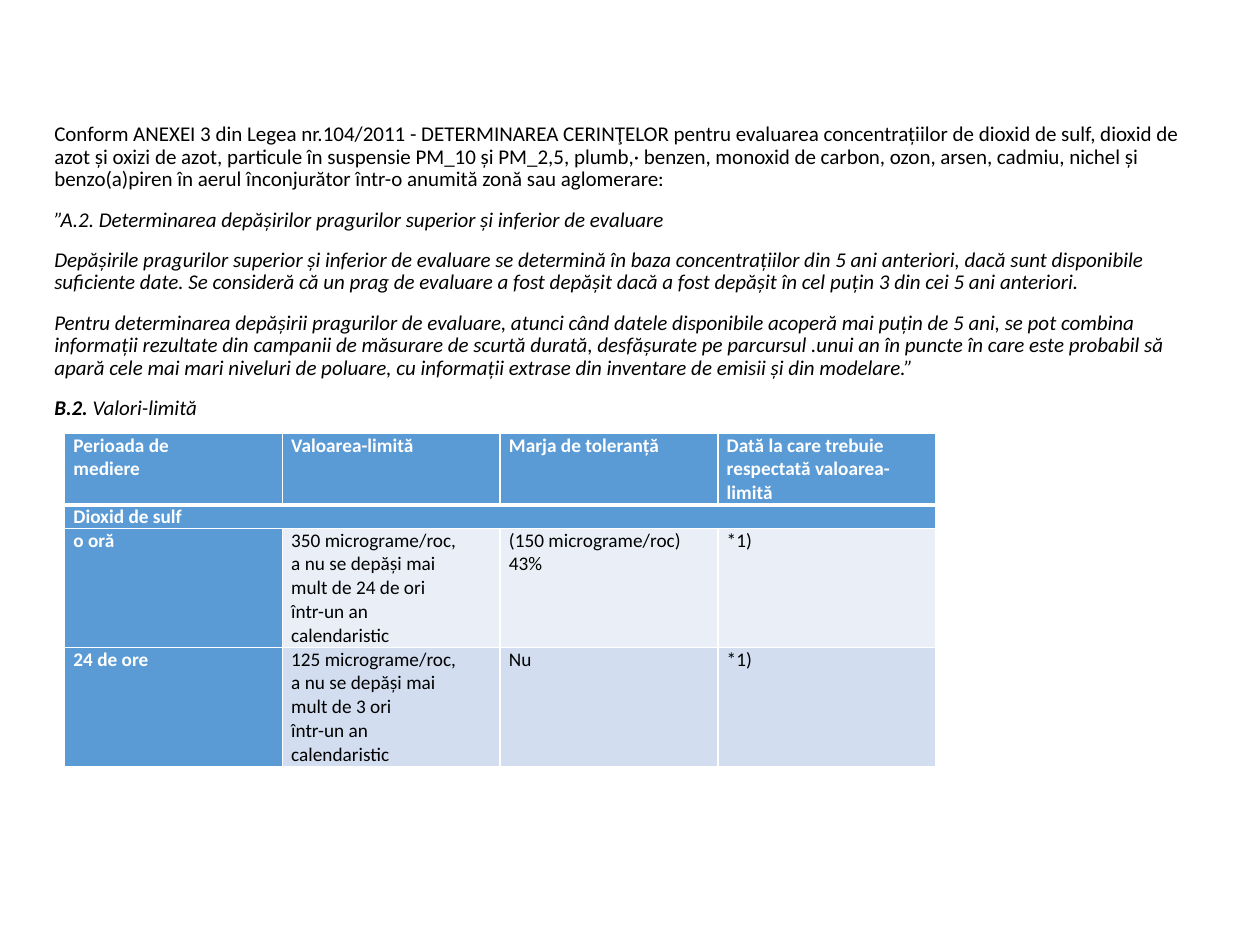
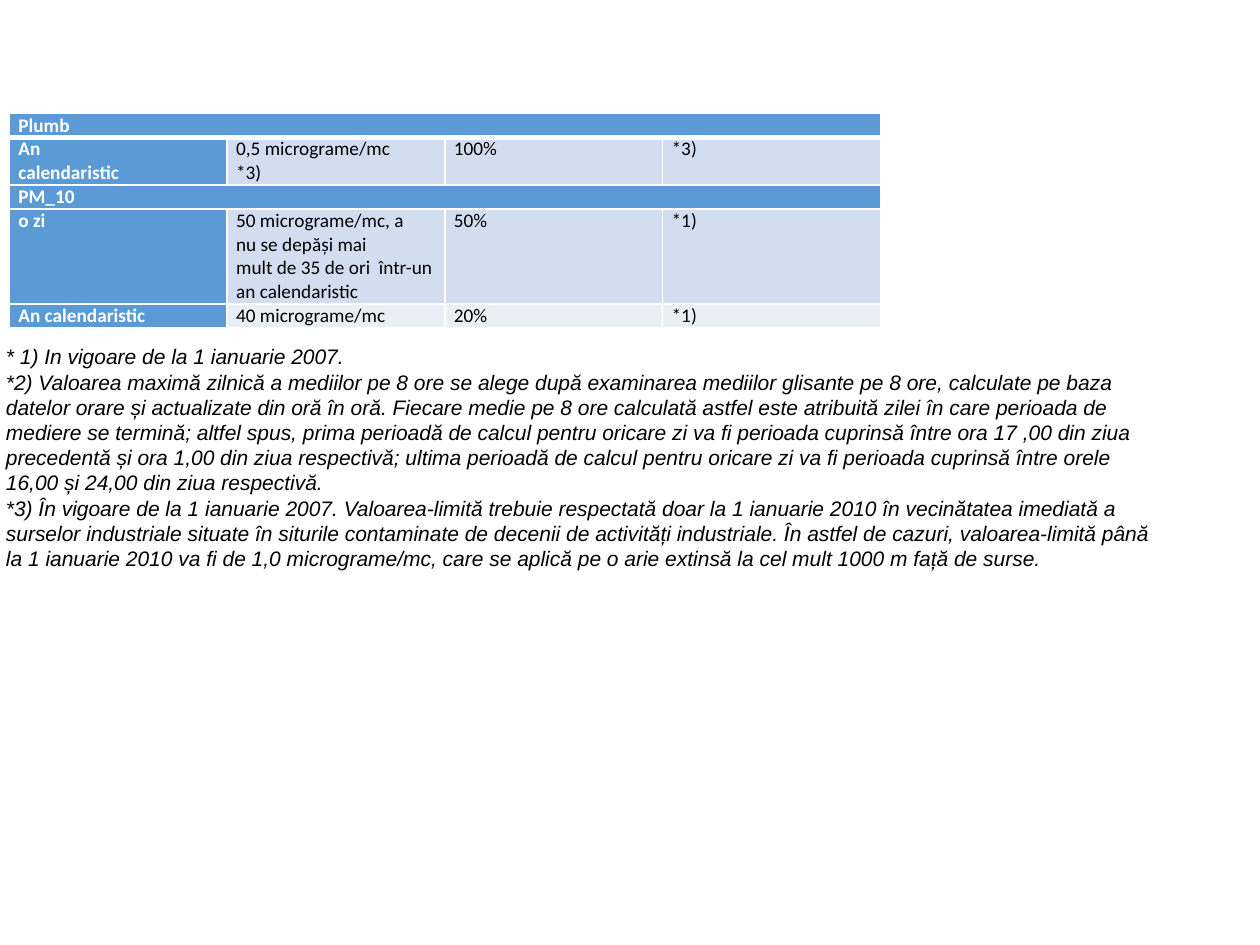
from dataclasses import dataclass

from lxml.etree import SubElement
from pptx import Presentation
from pptx.dml.color import RGBColor as RGB
from pptx.enum.text import MSO_AUTO_SIZE as AutoSize
from pptx.oxml.ns import qn
from pptx.util import Cm, Length, Pt


# Shared look
@dataclass(frozen=True)
class Theme:
    blue: RGB = RGB(0x5B, 0x9B, 0xD5)
    pale: RGB = RGB(0xEA, 0xEF, 0xF7)
    mid: RGB = RGB(0xD2, 0xDE, 0xEF)
    white: RGB = RGB(0xFF, 0xFF, 0xFF)
    black: RGB = RGB(0, 0, 0)
    body_font: str = "Calibri"
    note_font: str = "Arial"
    body_size: Length = Pt(12)
    table_size: Length = Pt(11)
    thin: Length = Pt(1)
    thick: Length = Pt(3)
    column: Length = Cm(4.39)
    line: Length = Cm(0.47)
    cell_margin: Length = Cm(0.18)


T = Theme()


@dataclass(frozen=True)
class Row:
    """A table row; one text makes a band across all columns."""
    texts: tuple[str, ...]
    lines: int = 1
    fill: RGB = T.blue


HEADER = Row(("Perioada de\nmediere", "Valoarea-limită", "Marja de toleranță",
              "Dată la care trebuie respectată valoarea- limită"), 3)
SULPHUR_ROWS = [
    HEADER,
    Row(("Dioxid de sulf",)),
    Row(("o oră",
         "350 micrograme/roc,\na nu se depăși mai\nmult de 24 de ori\nîntr-un an\ncalendaristic",
         "(150 micrograme/roc) 43%", "*1)"), 5, T.pale),
    Row(("24 de ore",
         "125 micrograme/roc,\na nu se depăși mai\nmult de 3 ori\nîntr-un an\ncalendaristic",
         "Nu", "*1)"), 5, T.mid),
]
LEAD_PM10_ROWS = [
    Row(("Plumb",)),
    Row(("An\ncalendaristic", "0,5 micrograme/mc\n*3)", "100%", "*3)"), 2, T.mid),
    Row(("PM_10",)),
    Row(("o zi",
         "50 micrograme/mc, a\nnu se depăși mai\nmult de 35 de ori  într-un an calendaristic",
         "50%", "*1)"), 4, T.mid),
    Row(("An calendaristic", "40 micrograme/mc", "20%", "*1)"), 1, T.pale),
]

INTRO = (
    "Conform ANEXEI 3 din Legea nr.104/2011 - DETERMINAREA CERINŢELOR pentru evaluarea "
    "concentrațiilor de dioxid de sulf, dioxid de azot și oxizi de azot, particule în suspensie "
    "PM_10 și PM_2,5, plumb,· benzen, monoxid de carbon, ozon, arsen, cadmiu, nichel și "
    "benzo(a)piren în aerul înconjurător într-o anumită zonă sau aglomerare:")
QUOTES = [
    "”A.2. Determinarea depășirilor pragurilor superior și inferior de evaluare",
    "Depășirile pragurilor superior și inferior de evaluare se determină în baza concentrațiilor "
    "din 5 ani anteriori, dacă sunt disponibile suficiente date. Se consideră că un prag de "
    "evaluare a fost depășit dacă a fost depășit în cel puțin 3 din cei 5 ani anteriori.",
    "Pentru determinarea depășirii pragurilor de evaluare, atunci când datele disponibile acoperă "
    "mai puțin de 5 ani, se pot combina informații rezultate din campanii de măsurare de scurtă "
    "durată, desfășurate pe parcursul .unui an în puncte în care este probabil să apară cele mai "
    "mari niveluri de poluare, cu informații extrase din inventare de emisii și din modelare.”",
]
NOTES = [
    "* 1) In vigoare de la 1 ianuarie 2007.",
    "*2) Valoarea maximă zilnică a mediilor pe 8 ore se alege după examinarea mediilor glisante "
    "pe 8 ore, calculate pe baza datelor orare și actualizate din oră în oră. Fiecare medie pe 8 "
    "ore calculată astfel este atribuită zilei în care perioada de mediere se termină; altfel "
    "spus, prima perioadă de calcul pentru oricare zi va fi perioada cuprinsă între ora 17 ,00 "
    "din ziua precedentă și ora 1,00 din ziua respectivă; ultima perioadă de calcul pentru "
    "oricare zi va fi perioada cuprinsă între orele 16,00 și 24,00 din ziua respectivă.",
    "*3) În vigoare de la 1 ianuarie 2007. Valoarea-limită trebuie respectată doar la 1 ianuarie "
    "2010 în vecinătatea imediată a surselor industriale situate în siturile contaminate de "
    "decenii de activități industriale. În astfel de cazuri, valoarea-limită până la 1 ianuarie "
    "2010 va fi de 1,0 micrograme/mc, care se aplică pe o arie extinsă la cel mult 1000 m față "
    "de surse.",
]


# Text
def add_run(p, text: str, *, size: Length = T.body_size, font: str = T.body_font,
            color: RGB = T.black, bold: bool = False, italic: bool = False) -> None:
    r = p.add_run()
    r.text = text
    r.font.size, r.font.name = size, font
    r.font.bold, r.font.italic = bold, italic
    r.font.color.rgb = color


def next_paragraph(tf, first: bool):
    return tf.paragraphs[0] if first else tf.add_paragraph()


def add_body_paragraph(tf, first: bool = False):
    p = next_paragraph(tf, first)
    p.line_spacing, p.space_before = 0.9, Pt(10)
    pPr = p._p.get_or_add_pPr()
    pPr.set("marL", "0")
    pPr.set("indent", "0")
    SubElement(pPr, qn("a:buNone"))
    return p


# Tables
def set_borders(cell, top: Length, bottom: Length) -> None:
    tcPr = cell._tc.get_or_add_tcPr()
    widths = {"a:lnL": T.thin, "a:lnR": T.thin, "a:lnT": top, "a:lnB": bottom}
    for i, (tag, width) in enumerate(widths.items()):
        ln = SubElement(tcPr, qn(tag), w=str(width))
        fill = SubElement(ln, qn("a:solidFill"))
        SubElement(fill, qn("a:srgbClr"), val=str(T.white))
        tcPr.insert(i, ln)


def fill_cell(cell, text: str, fill: RGB) -> None:
    cell.margin_left = cell.margin_right = T.cell_margin
    cell.margin_top = cell.margin_bottom = 0
    cell.fill.solid()
    cell.fill.fore_color.rgb = fill
    strong = fill == T.blue
    for i, line in enumerate(text.split("\n")):
        add_run(next_paragraph(cell.text_frame, i == 0), line, size=T.table_size,
                color=T.white if strong else T.black, bold=strong)


def add_limit_table(slide, rows: list[Row], left: Length, top: Length) -> None:
    cols = 4
    height = T.line * sum(row.lines for row in rows)
    table = slide.shapes.add_table(len(rows), cols, left, top, T.column * cols, height).table
    for col in table.columns:
        col.width = T.column
    for i, row in enumerate(rows):
        table.rows[i].height = T.line * row.lines
        is_band = len(row.texts) == 1
        if is_band:
            table.cell(i, 0).merge(table.cell(i, cols - 1))
        for j in range(cols):
            cell = table.cell(i, j)
            if j < len(row.texts):
                fill_cell(cell, row.texts[j], T.blue if j == 0 else row.fill)
            set_borders(cell, T.thick if i == 1 else T.thin, T.thick if i == 0 else T.thin)


# Slides
def build_requirements(prs) -> None:
    slide = prs.slides.add_slide(prs.slide_layouts[1])
    title = slide.shapes.title._element
    title.getparent().remove(title)
    body = slide.placeholders[1]
    body.left, body.top, body.width, body.height = Cm(0.84), Cm(2.36), Cm(23.72), Cm(14.2)
    tf = body.text_frame
    tf.auto_size = AutoSize.NONE
    add_run(add_body_paragraph(tf, first=True), INTRO)
    for quote in QUOTES:
        add_run(add_body_paragraph(tf), quote, italic=True)
    p = add_body_paragraph(tf)
    add_run(p, "B.2.", bold=True, italic=True)
    add_run(p, " Valori-limită", italic=True)
    add_limit_table(slide, SULPHUR_ROWS, Cm(1.3), Cm(8.74))


def build_limits_and_notes(prs) -> None:
    slide = prs.slides.add_slide(prs.slide_layouts[6])
    add_limit_table(slide, LEAD_PM10_ROWS, Cm(0.19), Cm(2.29))
    tf = slide.shapes.add_textbox(Cm(-0.13), Cm(6.81), Cm(23.62), Cm(4.88)).text_frame
    tf.word_wrap = True
    tf.auto_size = AutoSize.SHAPE_TO_FIT_TEXT
    for i, note in enumerate(NOTES):
        add_run(next_paragraph(tf, i == 0), note, font=T.note_font, italic=True)


def main() -> None:
    prs = Presentation()
    prs.slide_width, prs.slide_height = Cm(25.4), Cm(19.05)
    build_requirements(prs)
    build_limits_and_notes(prs)
    prs.save("out.pptx")


if __name__ == "__main__":
    main()
